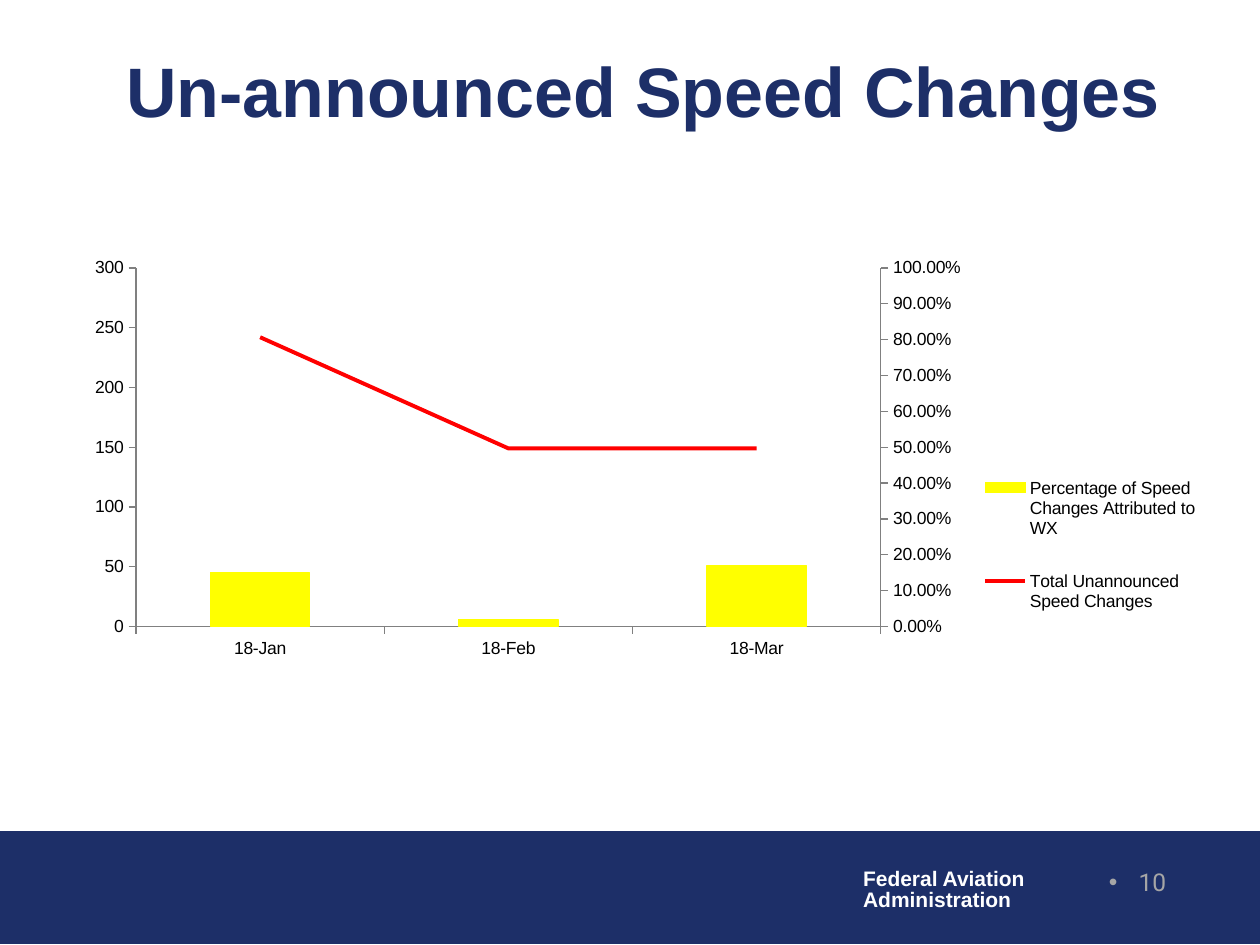
from copy import deepcopy

from pptx import Presentation
from pptx.chart.axis import CategoryAxis, ValueAxis
from pptx.chart.data import CategoryChartData
from pptx.dml.color import RGBColor
from pptx.enum.chart import XL_CHART_TYPE as ChartType
from pptx.enum.chart import XL_LEGEND_POSITION as LegendPosition
from pptx.enum.chart import XL_TICK_MARK as TickMark
from pptx.enum.shapes import MSO_SHAPE as Shape
from pptx.enum.text import MSO_ANCHOR as Anchor
from pptx.enum.text import PP_ALIGN as Align
from pptx.oxml import parse_xml
from pptx.oxml.ns import nsdecls, qn
from pptx.util import Cm, Pt

NAVY = RGBColor(0x1D, 0x2F, 0x68)
WHITE = RGBColor(0xFF, 0xFF, 0xFF)
BLACK = RGBColor(0, 0, 0)
SILVER = RGBColor(0xA6, 0xA6, 0xA6)
GRAY = RGBColor(0x80, 0x80, 0x80)
YELLOW = RGBColor(0xFF, 0xFF, 0)
RED = RGBColor(0xFF, 0, 0)

TITLE_FONT = {"name": "Arial", "size": Pt(40), "bold": True}
AGENCY_FONT = {"name": "Arial", "size": Pt(12), "bold": True}
NUMBER_FONT = {"name": "Roboto", "size": Pt(14), "bold": False}
CHART_FONT = {"name": "Arial", "size": Pt(10), "bold": False}

MONTHS = ["18-Jan", "18-Feb", "18-Mar"]
WEATHER_SHARE = [0.15, 0.02, 0.17]
SPEED_CHANGES = [242, 149, 149]


def set_font(font, values, color):
    """Apply a dict of font values and a colour."""
    for name, value in values.items():
        setattr(font, name, value)
    font.color.rgb = color


def set_line(line, color, width):
    """Give a line a solid colour and a width in points."""
    line.color.rgb = color
    line.width = Pt(width)


def add_title(page, text, left, top, width, height):
    """Place and format the title placeholder."""
    title = page.shapes.title
    title.left, title.top, title.width, title.height = left, top, width, height
    title.text_frame.text = text
    title.text_frame.vertical_anchor = Anchor.MIDDLE
    para = title.text_frame.paragraphs[0]
    para.alignment = Align.CENTER
    set_font(para.font, TITLE_FONT, NAVY)


def add_footer(page, left, top, width, height):
    """Draw the footer band with the agency name and page number."""
    band = page.shapes.add_shape(Shape.RECTANGLE, left, top, width, height)
    band.shadow.inherit = False
    band.fill.solid()
    band.fill.fore_color.rgb = NAVY
    set_line(band.line, NAVY, 0.75)

    box = page.shapes.add_textbox(left + Cm(17.15), top + Cm(0.64), Cm(3.8), Cm(1.12))
    box.text_frame.word_wrap = False
    box.text_frame.text = "Federal Aviation\nAdministration"
    for para in box.text_frame.paragraphs:
        para.line_spacing = 0.85
        set_font(para.font, AGENCY_FONT, WHITE)

    box = page.shapes.add_textbox(left + Cm(20.76), top + Cm(0.6), Cm(3), Cm(1.27))
    box.text_frame.word_wrap = True
    box.text_frame.text = "10"
    para = box.text_frame.paragraphs[0]
    para.alignment = Align.RIGHT
    properties = para._p.get_or_add_pPr()
    properties.set("marL", str(Cm(0.6)))
    properties.set("indent", str(-Cm(0.6)))
    properties.append(parse_xml(f'<a:buFont {nsdecls("a")} typeface="Arial"/>'))
    properties.append(parse_xml(f'<a:buChar {nsdecls("a")} char="•"/>'))
    set_font(para.font, NUMBER_FONT, SILVER)


def set_layout(parent, position, x, y, width, height, target=""):
    """Fix the layout of a chart part as fractions of the chart."""
    for old in parent.findall(qn("c:layout")):
        parent.remove(old)
    sizes = {"x": x, "y": y, "w": width, "h": height}
    modes = "".join(f'<c:{key}Mode val="edge"/>' for key in "xy")
    values = "".join(f'<c:{key} val="{value}"/>' for key, value in sizes.items())
    parent.insert(position, parse_xml(
        f'<c:layout {nsdecls("c")}><c:manualLayout>{target}{modes}{values}'
        "</c:manualLayout></c:layout>"))


def split_line_series(chart, months, shares):
    """Move the last series to a line plot and return its two axes."""
    bars = chart.plots[0]._element
    series = bars.findall(qn("c:ser"))[-1]
    bars.remove(series)
    for extra in series.findall(qn("c:invertIfNegative")):
        series.remove(extra)
    lines = parse_xml(
        f'<c:lineChart {nsdecls("c")}><c:grouping val="standard"/>'
        '<c:varyColors val="0"/><c:marker val="1"/>'
        '<c:axId val="5001"/><c:axId val="5002"/></c:lineChart>')
    lines.insert(2, series)
    bars.addnext(lines)

    last = shares._element
    pair = [deepcopy(months._element), deepcopy(last)]
    for axis, own, other in zip(pair, ("5001", "5002"), ("5002", "5001")):
        axis.find(qn("c:axId")).set("val", own)
        axis.find(qn("c:crossAx")).set("val", other)
        last.addnext(axis)
        last = axis
    months.visible = False
    shares._element.find(qn("c:axPos")).set("val", "r")
    shares._element.find(qn("c:crosses")).set("val", "max")
    return CategoryAxis(pair[0]), ValueAxis(pair[1])


def format_value_axis(axis, top, step, number_format):
    """Scale a value axis from zero and format its labels."""
    scale = {"minimum_scale": 0, "maximum_scale": top, "major_unit": step}
    for name, value in scale.items():
        setattr(axis, name, value)
    axis.major_tick_mark = TickMark.OUTSIDE
    axis.tick_labels.number_format = number_format
    axis.tick_labels.number_format_is_linked = False
    set_line(axis.format.line, GRAY, 0.75)


def add_speed_chart(page, left, top, width, height):
    """Add the columns with percentages and the line with totals."""
    data = CategoryChartData()
    data.categories = MONTHS
    data.add_series("Percentage of Speed Changes Attributed to WX", WEATHER_SHARE, "0.00%")
    data.add_series("Total Unannounced Speed Changes", SPEED_CHANGES, "0")
    chart = page.shapes.add_chart(
        ChartType.COLUMN_CLUSTERED, left, top, width, height, data).chart
    chart.has_title = False
    set_font(chart.font, CHART_FONT, BLACK)
    chart.plots[0].gap_width = 150
    chart.plots[0].vary_by_categories = False

    shares = chart.value_axis
    shares.has_major_gridlines = False
    months, totals = split_line_series(chart, chart.category_axis, shares)
    months.major_tick_mark = TickMark.OUTSIDE
    set_line(months.format.line, GRAY, 0.75)
    format_value_axis(shares, 1, 0.1, "0.00%")
    format_value_axis(totals, 300, 50, "0")
    totals.has_major_gridlines = True
    set_line(totals.major_gridlines.format.line, GRAY, 0.75)

    columns, line = (plot.series[0] for plot in chart.plots)
    columns.format.fill.solid()
    columns.format.fill.fore_color.rgb = YELLOW
    set_line(columns.format.line, YELLOW, 0.75)
    set_line(line.format.line, RED, 2.25)
    line.smooth = False
    line._element.get_or_add_marker().insert(
        0, parse_xml(f'<c:symbol {nsdecls("c")} val="none"/>'))

    chart.has_legend = True
    chart.legend.position = LegendPosition.RIGHT
    chart.legend.include_in_layout = False
    set_font(chart.legend.font, CHART_FONT, BLACK)
    set_layout(chart.legend._element, 1, 0.79, 0.42, 0.2, 0.42)
    set_layout(chart._chartSpace.chart.plotArea, 0, 0.07, 0.05, 0.64, 0.75,
               '<c:layoutTarget val="inner"/>')


def main():
    """Build and save the deck."""
    deck = Presentation()
    deck.slide_width, deck.slide_height = Cm(25.4), Cm(19.05)
    page = deck.slides.add_slide(deck.slide_layouts[5])
    add_footer(page, Cm(0), Cm(16.76), Cm(25.4), Cm(2.26))
    add_title(page, "Un-announced Speed Changes", Cm(1.19), Cm(0.95), Cm(23.55), Cm(1.7))
    add_speed_chart(page, Cm(1.1), Cm(4.92), Cm(23.46), Cm(9.64))
    deck.save("out.pptx")


if __name__ == "__main__":
    main()
